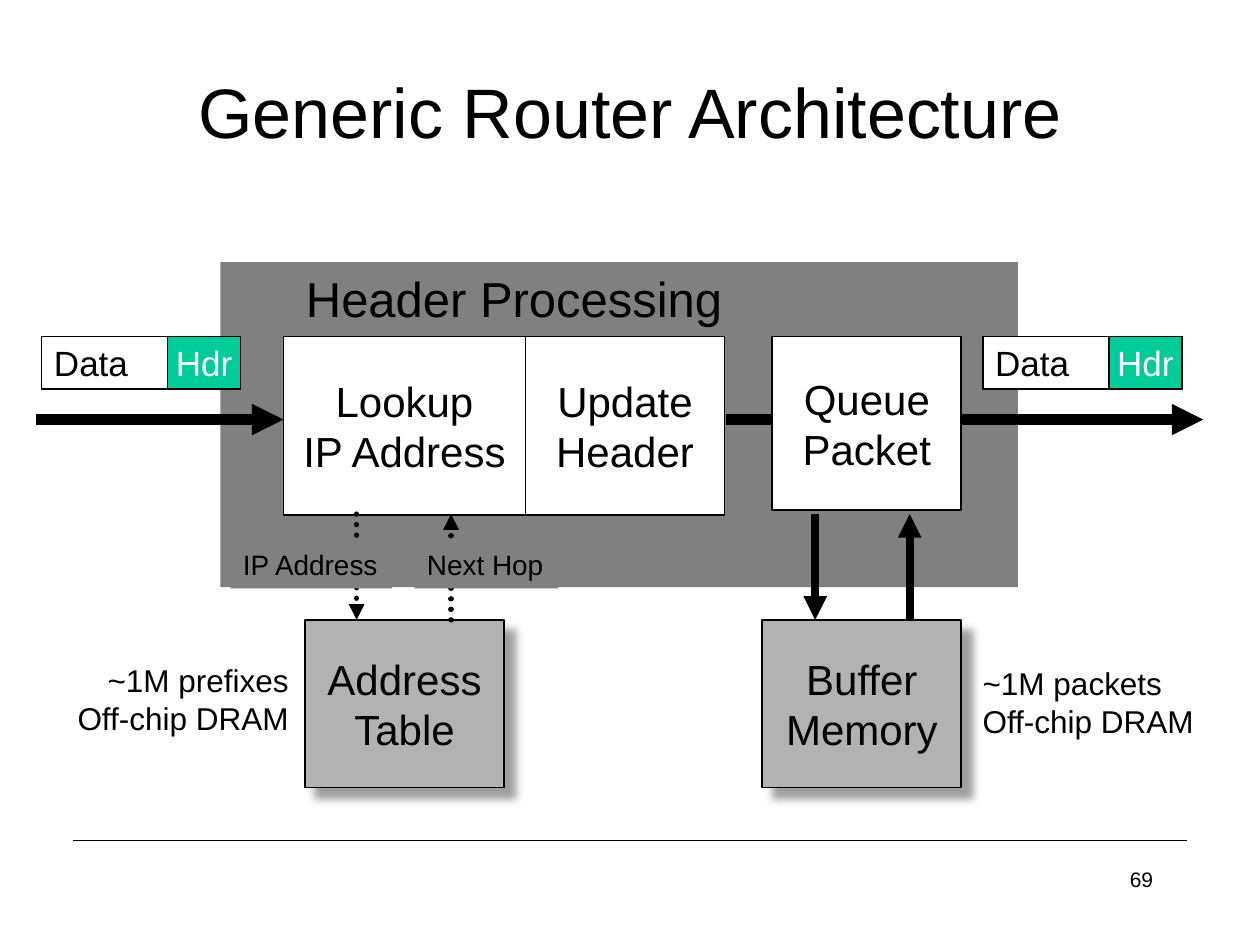
from dataclasses import dataclass

from lxml import etree
from pptx import Presentation
from pptx.dml.color import RGBColor
from pptx.enum.dml import MSO_LINE
from pptx.enum.shapes import MSO_CONNECTOR, MSO_SHAPE
from pptx.enum.text import MSO_ANCHOR, PP_ALIGN
from pptx.oxml.ns import qn
from pptx.util import Inches, Pt

LEFT, CENTER, RIGHT = PP_ALIGN.LEFT, PP_ALIGN.CENTER, PP_ALIGN.RIGHT
TOP, MIDDLE = MSO_ANCHOR.TOP, MSO_ANCHOR.MIDDLE
RECTANGLE = MSO_SHAPE.RECTANGLE
STRAIGHT = MSO_CONNECTOR.STRAIGHT
DOTTED = MSO_LINE.ROUND_DOT

BLACK, WHITE, GREEN = "000000", "FFFFFF", "00CC99"
GRAY, LIGHT_GRAY = "808080", "B2B2B2"
STAGE_TOP, STAGE_BOTTOM, MEMORY_TOP = 2.67, 4.08, 4.92
FLOW_Y = 3.33


@dataclass
class Box:
    text: str
    left: float
    top: float
    width: float
    height: float
    fill: str = WHITE
    outlined: bool = True
    shadowed: bool = False
    size: int = 24
    color: str = BLACK
    align: PP_ALIGN = CENTER
    anchor: MSO_ANCHOR = MIDDLE


@dataclass
class Line:
    x1: float
    y1: float
    x2: float
    y2: float
    width: float
    cap: str = "flat"
    dotted: bool = False
    arrow: bool = True


def rgb(value: str) -> RGBColor:
    return RGBColor.from_string(value)


def write_text(shape, text: str, *, size: int, color: str = BLACK,
               align: PP_ALIGN = LEFT, anchor: MSO_ANCHOR = TOP,
               wrap: bool = False) -> None:
    frame = shape.text_frame
    frame.word_wrap = wrap
    frame.vertical_anchor = anchor
    frame.text = text
    for paragraph in frame.paragraphs:
        paragraph.alignment = align
        font = paragraph.runs[0].font
        font.name = "Arial"
        font.size = Pt(size)
        font.color.rgb = rgb(color)


def add_shadow(shape) -> None:
    effects = shape._element.spPr.find(qn("a:effectLst"))
    shadow = etree.SubElement(
        effects, qn("a:outerShdw"), blurRad=str(Pt(5)), dist=str(Pt(8.5)),
        dir=str(45 * 60000), algn="ctr", rotWithShape="0")
    color = etree.SubElement(shadow, qn("a:srgbClr"), val=GRAY)
    etree.SubElement(color, qn("a:alpha"), val="75000")


def draw_box(slide, box: Box) -> None:
    shape = slide.shapes.add_shape(
        RECTANGLE, Inches(box.left), Inches(box.top),
        Inches(box.width), Inches(box.height))
    shape.shadow.inherit = False
    shape.fill.solid()
    shape.fill.fore_color.rgb = rgb(box.fill)
    if box.outlined:
        shape.line.color.rgb = rgb(BLACK)
        shape.line.width = Pt(1)
    else:
        shape.line.fill.background()
    if box.shadowed:
        add_shadow(shape)
    if box.text:
        write_text(shape, box.text, size=box.size, color=box.color,
                   align=box.align, anchor=box.anchor)


def draw_line(slide, line: Line) -> None:
    connector = slide.shapes.add_connector(
        STRAIGHT, Inches(line.x1), Inches(line.y1),
        Inches(line.x2), Inches(line.y2))
    connector.line.color.rgb = rgb(BLACK)
    connector.line.width = Pt(line.width)
    if line.dotted:
        connector.line.dash_style = DOTTED
    properties = connector._element.spPr
    outline = properties.find(qn("a:ln"))
    outline.set("cap", line.cap)
    if line.arrow:
        etree.SubElement(outline, qn("a:tailEnd"), type="triangle")
    etree.SubElement(properties, qn("a:effectLst"))


def add_label(slide, text: str, left: float, top: float, width: float,
              height: float, **text_format) -> None:
    label = slide.shapes.add_textbox(
        Inches(left), Inches(top), Inches(width), Inches(height))
    write_text(label, text, **text_format)


def stage(text: str, left: float, width: float, height: float = 1.42) -> Box:
    return Box(text, left, STAGE_TOP, width, height)


def memory(text: str, left: float) -> Box:
    return Box(text, left, MEMORY_TOP, 1.58, 1.33, LIGHT_GRAY, shadowed=True)


def caption(text: str, left: float, top: float, width: float,
            height: float, size: int) -> Box:
    return Box(text, left, top, width, height, GRAY, outlined=False,
               size=size, align=LEFT, anchor=TOP)


def packet(left: float) -> list[Box]:
    return [
        Box("Data", left, STAGE_TOP, 1.58, 0.42, size=20, align=LEFT),
        Box("Hdr", left + 1, STAGE_TOP, 0.58, 0.42, GREEN, size=20, color=WHITE),
    ]


def flow(start: float, end: float) -> Line:
    return Line(start, FLOW_Y, end, FLOW_Y, 6, cap="sq")


def link(x: float, downward: bool, width: float, **style) -> Line:
    ends = (STAGE_BOTTOM, MEMORY_TOP) if downward else (MEMORY_TOP, STAGE_BOTTOM)
    return Line(x, ends[0], x, ends[1], width, **style)


def main() -> None:
    presentation = Presentation()
    presentation.slide_width = Inches(10)
    presentation.slide_height = Inches(7.5)
    slide = presentation.slides.add_slide(presentation.slide_layouts[5])

    title = slide.shapes.title
    title.left, title.top = Inches(0.75), Inches(0.25)
    title.width, title.height = Inches(8.5), Inches(1.25)
    write_text(title, "Generic Router Architecture", size=40,
               align=CENTER, anchor=MIDDLE, wrap=True)

    dotted = {"cap": "rnd", "dotted": True}
    elements = [
        Line(0.58, 6.67, 9.42, 6.67, 0.75, arrow=False),
        Box("", 1.75, 2.08, 6.33, 2.58, GRAY, outlined=False),
        stage("Lookup\nIP Address", 2.25, 1.92),
        stage("Update\nHeader", 4.17, 1.58),
        caption("Header Processing", 2.33, 2.08, 3.57, 0.57, 28),
        flow(0.33, 2.25),
        *packet(0.33),
        flow(5.8, 9.55),
        *packet(7.8),
        memory("Address\nTable", 2.42),
        link(2.83, True, 3, **dotted),
        caption("IP Address", 1.83, 4.3, 1.28, 0.37, 16),
        link(3.58, False, 3, **dotted),
        caption("Next Hop", 3.29, 4.3, 1.14, 0.37, 16),
        stage("Queue\nPacket", 6.13, 1.5, 1.38),
        memory("Buffer\nMemory", 6.05),
        link(6.47, True, 4.5),
        link(7.22, False, 4.5),
    ]
    for element in elements:
        if isinstance(element, Box):
            draw_box(slide, element)
        else:
            draw_line(slide, element)

    add_label(slide, "~1M prefixes\nOff-chip DRAM", 0.5, 5.2, 1.89, 0.71,
              size=18, align=RIGHT)
    add_label(slide, "~1M packets\nOff-chip DRAM", 7.7, 5.22, 1.89, 0.71, size=18)
    add_label(slide, "69", 7.17, 6.83, 2.08, 0.5, size=12, align=RIGHT, wrap=True)

    presentation.save("out.pptx")


if __name__ == "__main__":
    main()
